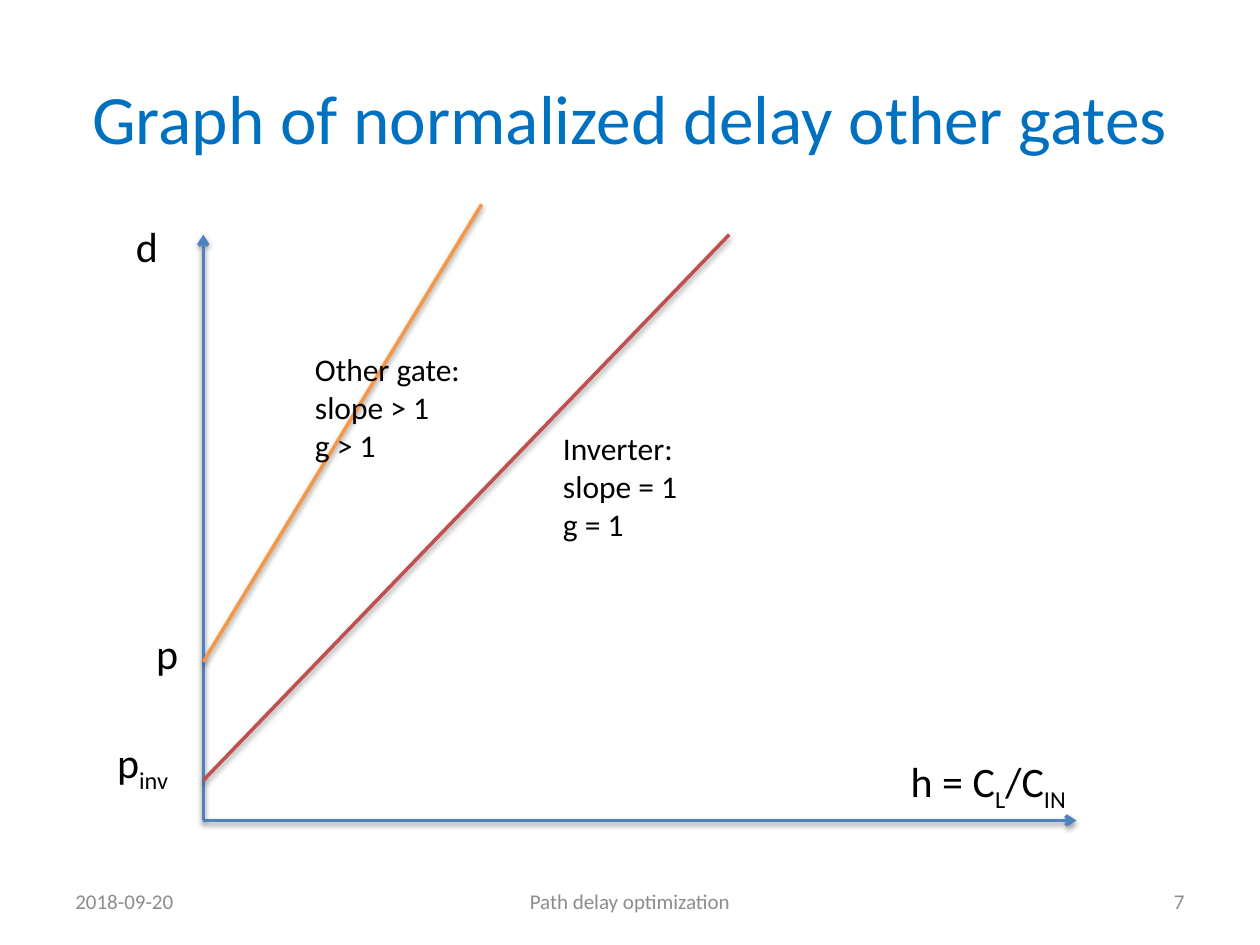
import dataclasses

import lxml.etree
import pptx
import pptx.dml.color
import pptx.enum.shapes
import pptx.enum.text
import pptx.oxml.ns
import pptx.util

Cm = pptx.util.Cm
Align = pptx.enum.text.PP_ALIGN
Anchor = pptx.enum.text.MSO_ANCHOR


@dataclasses.dataclass(frozen=True)
class Theme:
    font: str = "Calibri"
    title_color: str = "0070C0"
    text_color: str = "000000"
    footer_color: str = "8C8C8C"
    axis_color: str = "4F81BD"
    inverter_color: str = "C0504D"
    gate_color: str = "F79646"
    title_size: float = 39.6
    label_size: float = 24
    note_size: float = 18
    footer_size: float = 12
    line_width: float = 2


class SlideBuilder:
    def __init__(self, slide, theme):
        self.slide = slide
        self.theme = theme

    def text(self, box, paragraphs, size, color, align=Align.LEFT,
             anchor=Anchor.TOP, wrap=True):
        """Each paragraph is a list of runs; every second run is a subscript."""
        shape = self.slide.shapes.add_textbox(*map(Cm, box))
        frame = shape.text_frame
        frame.word_wrap = wrap
        frame.vertical_anchor = anchor
        for index, pieces in enumerate(paragraphs):
            paragraph = frame.paragraphs[0] if index == 0 else frame.add_paragraph()
            paragraph.alignment = align
            paragraph.font.name = self.theme.font
            paragraph.font.size = pptx.util.Pt(size)
            paragraph.font.color.rgb = pptx.dml.color.RGBColor.from_string(color)
            for position, piece in enumerate(pieces):
                run = paragraph.add_run()
                run.text = piece
                if position % 2:
                    run._r.get_or_add_rPr().set("baseline", "-25000")

    def title(self, text):
        self.text((1.27, 0.76, 22.86, 3.18), [[text]], self.theme.title_size,
                  self.theme.title_color, Align.CENTER, Anchor.MIDDLE)

    def footer(self, left, width, text, align):
        self.text((left, 17.65, width, 1.02), [[text]], self.theme.footer_size,
                  self.theme.footer_color, align, Anchor.MIDDLE)

    def label(self, left, top, width, *pieces, wrap=False):
        self.text((left, top, width, 1.27), [pieces], self.theme.label_size,
                  self.theme.text_color, wrap=wrap)

    def note(self, left, top, *lines):
        self.text((left, top, 3.61, 2.57), [[line] for line in lines],
                  self.theme.note_size, self.theme.text_color)

    def line(self, start, end, color, arrow=False):
        connector = self.slide.shapes.add_connector(
            pptx.enum.shapes.MSO_CONNECTOR.STRAIGHT, *map(Cm, start + end))
        connector.line.width = pptx.util.Pt(self.theme.line_width)
        connector.line.color.rgb = pptx.dml.color.RGBColor.from_string(color)
        qn = pptx.oxml.ns.qn
        add = lxml.etree.SubElement
        properties = connector._element.spPr
        if arrow:
            add(properties.find(qn("a:ln")), qn("a:tailEnd"), type="arrow")
        # Soft shadow straight below the line
        effects = add(properties, qn("a:effectLst"))
        shadow = add(effects, qn("a:outerShdw"), blurRad="40000", dist="20000",
                     dir="5400000", rotWithShape="0")
        shade = add(shadow, qn("a:srgbClr"), val="000000")
        add(shade, qn("a:alpha"), val="38000")


def main():
    presentation = pptx.Presentation()
    presentation.slide_width = Cm(25.4)
    presentation.slide_height = Cm(19.05)
    slide = presentation.slides.add_slide(presentation.slide_layouts[6])
    theme = Theme()
    builder = SlideBuilder(slide, theme)

    # Title and footer
    builder.title("Graph of normalized delay other gates")
    builder.footer(1.27, 5.92, "2018-09-20", Align.LEFT)
    builder.footer(8.68, 8.04, "Path delay optimization", Align.CENTER)
    builder.footer(18.21, 5.92, "7", Align.RIGHT)

    # Axes
    origin_x, origin_y, axis_top = 4.1, 16.54, 4.73
    origin = (origin_x, origin_y)
    builder.line(origin, (origin_x, axis_top), theme.axis_color, arrow=True)
    builder.line(origin, (21.7, origin_y), theme.axis_color, arrow=True)

    # Delay lines, starting at their parasitic delay
    builder.line((origin_x, 15.73), (14.7, axis_top), theme.inverter_color)
    builder.line((origin_x, 13.34), (9.71, 4.12), theme.gate_color)

    # Axis labels
    builder.label(18.11, 15.11, 4.09, "h = C", "L", "/C", "IN", wrap=True)
    builder.label(2.49, 4.32, 0.97, "d")
    builder.label(2.11, 14.73, 1.68, "p", "inv")
    builder.label(2.9, 12.52, 0.97, "p")

    # Line descriptions
    builder.note(11.1, 8.53, "Inverter:", "slope = 1", "g = 1")
    builder.note(6.1, 6.93, "Other gate:", "slope > 1", "g > 1")

    presentation.save("out.pptx")


if __name__ == "__main__":
    main()
